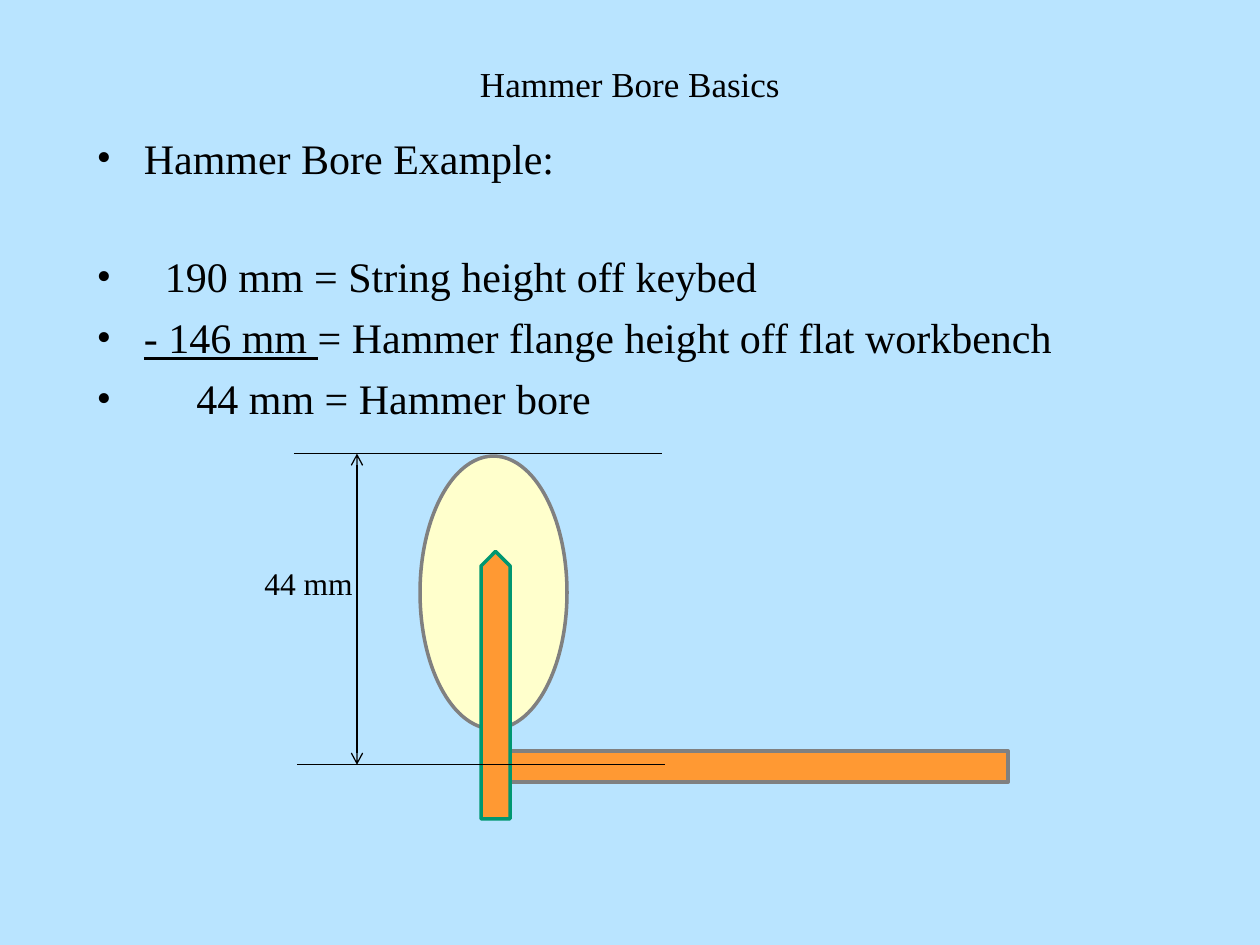
from lxml.etree import SubElement
from pptx import Presentation
from pptx.dml.color import RGBColor
from pptx.enum.shapes import MSO_CONNECTOR, MSO_SHAPE
from pptx.enum.text import MSO_ANCHOR, MSO_AUTO_SIZE, PP_ALIGN
from pptx.oxml.ns import qn
from pptx.util import Pt

COLORS = {
    "background": "B9E4FF",
    "ink": "000000",
    "wood": "FF9933",
    "felt": "FFFFCC",
    "outline": "808080",
    "molding": "009771",
}
FONT = "Times New Roman"
BULLET_INDENT = 27
STRING_Y, CENTER_Y = 259.2, 437


def color(name):
    return RGBColor.from_string(COLORS[name])


def place(element, left, top, width, height):
    element.left, element.top = Pt(left), Pt(top)
    element.width, element.height = Pt(width), Pt(height)


def write(paragraph, text, size, underline=False, align=PP_ALIGN.LEFT):
    paragraph.alignment = align
    run = paragraph.add_run()
    run.text = text
    run.font.name = FONT
    run.font.size = Pt(size)
    run.font.underline = underline
    run.font.color.rgb = color("ink")


def set_bullet(paragraph, extra_indent):
    properties = paragraph._p.get_or_add_pPr()
    indent = BULLET_INDENT + extra_indent
    properties.set("marL", str(Pt(indent)))
    properties.set("indent", str(-Pt(indent)))
    SubElement(properties, qn("a:buFont"), typeface=FONT)
    SubElement(properties, qn("a:buChar"), char="•")


def add_title(slide, text):
    title = slide.shapes.title
    place(title, 54, 30, 612, 36)
    title.text_frame.auto_size = MSO_AUTO_SIZE.NONE
    title.text_frame.vertical_anchor = MSO_ANCHOR.MIDDLE
    write(title.text_frame.paragraphs[0], text, 20, align=PP_ALIGN.CENTER)


def add_calculation(slide, items):
    body = slide.placeholders[1]
    place(body, 48, 72, 612, 204)
    frame = body.text_frame
    frame.auto_size = MSO_AUTO_SIZE.NONE
    frame.vertical_anchor = MSO_ANCHOR.TOP
    for index, (space_before, extra_indent, runs) in enumerate(items):
        paragraph = frame.add_paragraph() if index else frame.paragraphs[0]
        paragraph.space_before = Pt(space_before)
        set_bullet(paragraph, extra_indent)
        for text, underline in runs:
            write(paragraph, text, 24, underline=underline)


def add_part(slide, kind, bounds, fill, outline, rotation=0):
    part = slide.shapes.add_shape(kind, *map(Pt, bounds))
    part.rotation = rotation
    part.shadow.inherit = False
    part.fill.solid()
    part.fill.fore_color.rgb = color(fill)
    part.line.color.rgb = color(outline)
    part.line.width = Pt(2)


def add_line(slide, start, end, arrows=False):
    line = slide.shapes.add_connector(
        MSO_CONNECTOR.STRAIGHT, *map(Pt, (*start, *end)))
    line.line.color.rgb = color("ink")
    line.line.width = Pt(0.75)
    if arrows:
        for tip in ("a:headEnd", "a:tailEnd"):
            SubElement(line.line._get_or_add_ln(), qn(tip), type="arrow")
    SubElement(line._element.spPr, qn("a:effectLst"))


def add_label(slide, text, bounds):
    label = slide.shapes.add_textbox(*map(Pt, bounds))
    label.text_frame.word_wrap = True
    write(label.text_frame.paragraphs[0], text, 18)


def main():
    deck = Presentation()
    deck.slide_width, deck.slide_height = Pt(720), Pt(540)
    slide = deck.slides.add_slide(deck.slide_layouts[1])
    slide.background.fill.solid()
    slide.background.fill.fore_color.rgb = color("background")

    add_title(slide, "Hammer Bore Basics")
    add_calculation(slide, [
        (6, 0, [("Hammer Bore Example:", False)]),
        (39, 12, [("190 mm = String height off keybed", False)]),
        (6, 0, [("- 146 mm ", True),
                ("= Hammer flange height off flat workbench", False)]),
        (6, 30, [("44 mm = Hammer bore", False)]),
    ])

    add_part(slide, MSO_SHAPE.RECTANGLE, (288, 429, 288, 18),
             "wood", "outline")
    add_part(slide, MSO_SHAPE.OVAL, (240, 260.6, 84, 156), "felt", "outline")
    add_part(slide, MSO_SHAPE.PENTAGON, (206.8, 383.2, 152.8, 16.6),
             "wood", "molding", rotation=270)

    for left, y in ((168, STRING_Y), (170, CENTER_Y)):
        add_line(slide, (left, y), (left + 210, y))
    add_line(slide, (204, STRING_Y), (204, CENTER_Y), arrows=True)
    add_label(slide, "44 mm", (144, 319, 72, 28.8))
    deck.save("out.pptx")


if __name__ == "__main__":
    main()
